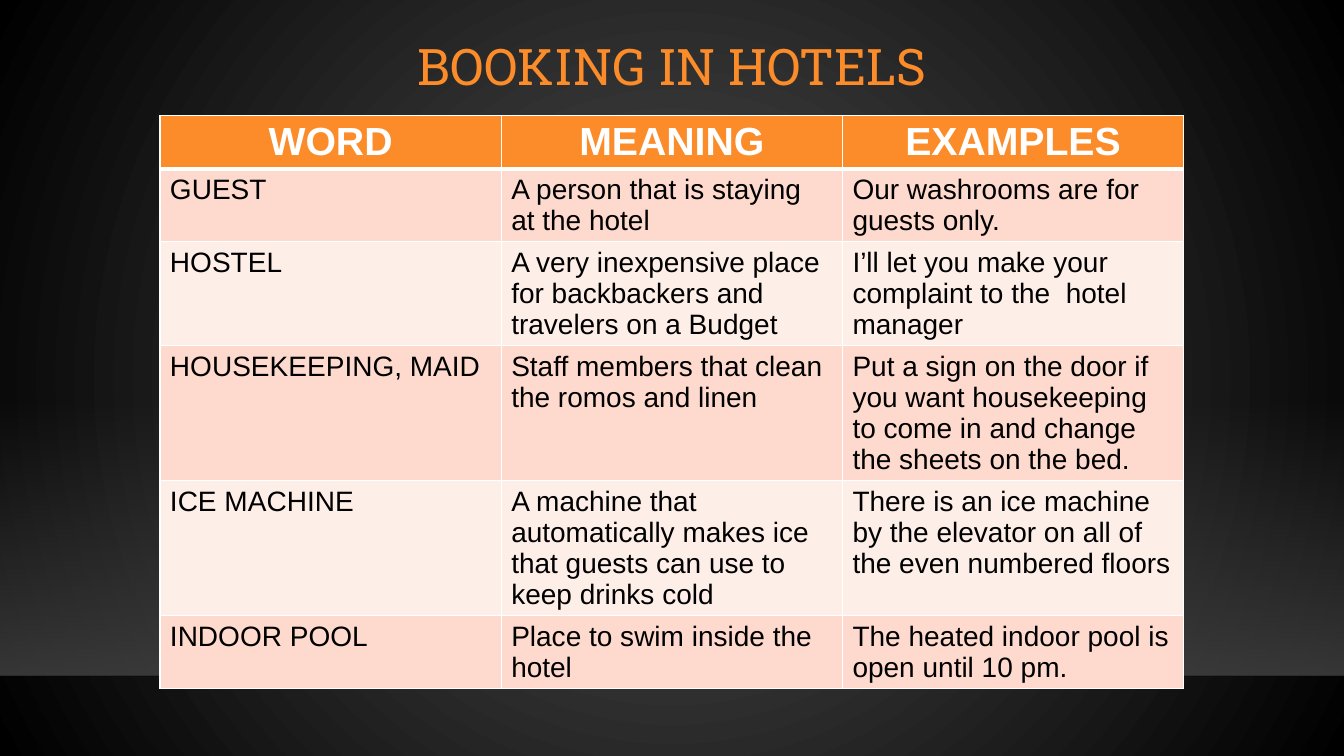
from lxml import etree
from pptx import Presentation, util as u
from pptx.dml.color import RGBColor
from pptx.enum import shapes, text
from pptx.oxml import parse_xml
from pptx.oxml.ns import qn

NS = 'xmlns:a="http://schemas.openxmlformats.org/drawingml/2006/main"'
HUES = {"accent": "FB8C29", "odd": "FDDACD", "even": "FEEEE8", "rule": "FFFFFF",
        "ink": "000000", "band": "454545", "glow": "505050", "edge": "000001"}
WIDE, HIGH = 33.87, 19.05
HEAD = ["WORD", "MEANING", "EXAMPLES"]
WORDS = [
    (2, "GUEST", "A person that is staying at the hotel",
     "Our washrooms are for guests only."),
    (3, "HOSTEL", "A very inexpensive place for backbackers and travelers on a Budget",
     "I’ll let you make your complaint to the  hotel manager"),
    (4, "HOUSEKEEPING, MAID", "Staff members that clean the romos and linen",
     "Put a sign on the door if you want housekeeping to come in and change the sheets on the bed."),
    (4, "ICE MACHINE",
     "A machine that automatically makes ice that guests can use to keep drinks cold",
     "There is an ice machine by the elevator on all of the even numbered floors"),
    (2, "INDOOR POOL", "Place to swim inside the hotel",
     "The heated indoor pool is open until 10 pm."),
]


def hue(name):
    return RGBColor.from_string(HUES[name])


def blend(first, last, way):
    """Build a two-stop gradient from (colour, opacity) pairs."""
    stops = "".join(
        f'<a:gs pos="{pos}"><a:srgbClr val="{HUES[name]}"><a:alpha val="{alpha * 1000}"/>'
        f'</a:srgbClr></a:gs>' for pos, (name, alpha) in ((0, first), (100000, last)))
    return parse_xml(f'<a:gradFill {NS} rotWithShape="1"><a:gsLst>{stops}</a:gsLst>{way}</a:gradFill>')


class Deck:
    """Hold the style and the current slide."""

    def __init__(self):
        self.prs = Presentation()
        self.prs.slide_width, self.prs.slide_height = u.Cm(WIDE), u.Cm(HIGH)
        self.slide = self.prs.slides.add_slide(self.prs.slide_layouts[5])

    def swap(self, host, fill):
        """Put a gradient in place of a solid fill."""
        old = host.find(qn("a:solidFill"))
        host.replace(old, fill)

    def back(self):
        """Paint the round glow of the background."""
        self.slide.background.fill.solid()
        mid = '<a:path path="circle"><a:fillToRect l="50000" t="50000" r="50000" b="50000"/></a:path>'
        host = self.slide._element.cSld.find(qn("p:bg")).find(qn("p:bgPr"))
        self.swap(host, blend(("glow", 100), ("ink", 100), mid))

    def band(self, top, tall):
        """Draw the floor band that fades in downwards."""
        box = self.slide.shapes.add_shape(
            shapes.MSO_SHAPE.RECTANGLE, 0, u.Cm(top), u.Cm(WIDE), u.Cm(tall))
        box.shadow.inherit = False
        box.line.fill.background()
        box.fill.solid()
        self.swap(box._element.spPr,
                  blend(("band", 0), ("band", 80), '<a:lin ang="5400000" scaled="0"/>'))

    def line(self, top):
        """Draw the faint floor line."""
        rod = self.slide.shapes.add_connector(
            shapes.MSO_CONNECTOR.STRAIGHT, 0, u.Cm(top), u.Cm(WIDE), u.Cm(top))
        rod.line.width = u.Pt(1)
        rod.line.color.rgb = hue("edge")
        props = rod._element.spPr
        tint = next(props.iter(qn("a:srgbClr")))
        etree.SubElement(tint, qn("a:alpha")).set("val", "20000")
        etree.SubElement(props, qn("a:effectLst"))

    def title(self, words, left, top, wide, tall):
        """Place and format the title."""
        box = self.slide.shapes.title
        box.left, box.top, box.width, box.height = map(u.Cm, (left, top, wide, tall))
        frame = box.text_frame
        frame.text = words
        frame.vertical_anchor = text.MSO_ANCHOR.MIDDLE
        para = frame.paragraphs[0]
        para.line_spacing = 0.9
        self.font(para, 36, "accent", "Roboto Slab", text.PP_ALIGN.CENTER)

    def font(self, para, size, tint, face="Arial", align=text.PP_ALIGN.LEFT, bold=False):
        """Format one paragraph."""
        para.alignment = align
        para.font.name, para.font.size, para.font.bold = face, u.Pt(size), bold
        para.font.color.rgb = hue(tint)

    def cell(self, cell, words, fill, base):
        """Write, border and fill one cell."""
        cell.text = words
        props = cell._tc.get_or_add_tcPr()
        for side, wide in (("L", 1), ("R", 1), ("T", 1), ("B", base)):
            edge = etree.SubElement(props, qn(f"a:ln{side}"), w=str(u.Pt(wide)))
            paint = etree.SubElement(edge, qn("a:solidFill"))
            etree.SubElement(paint, qn("a:srgbClr"), val=HUES["rule"])
        cell.fill.solid()
        cell.fill.fore_color.rgb = hue(fill)

    def table(self, head, rows, left, top, wide):
        """Build the word list, each row as tall as its lines of text."""
        tall = [1.35] + [0.25 + 0.78 * row[0] for row in rows]
        grid = self.slide.shapes.add_table(
            len(tall), len(head), u.Cm(left), u.Cm(top), u.Cm(wide), u.Cm(sum(tall))).table
        for row, size in zip(grid.rows, tall):
            row.height = u.Cm(size)
        for col, words in enumerate(head):
            cell = grid.cell(0, col)
            self.cell(cell, words, "accent", 3)
            self.font(cell.text_frame.paragraphs[0], 28, "rule",
                      align=text.PP_ALIGN.CENTER, bold=True)
        for num, (_, *row) in enumerate(rows, 1):
            for col, words in enumerate(row):
                cell = grid.cell(num, col)
                self.cell(cell, words, "odd" if num % 2 else "even", 1)
                self.font(cell.text_frame.paragraphs[0], 20, "ink")


def main():
    deck = Deck()
    deck.back()
    deck.band(10.06, 6.97)
    deck.line(17.03)
    deck.title("BOOKING IN HOTELS", 4.03, 0.28, 25.8, 2.92)
    deck.table(HEAD, WORDS, 4.03, 2.91, 25.8)
    deck.prs.save("out.pptx")


if __name__ == "__main__":
    main()
